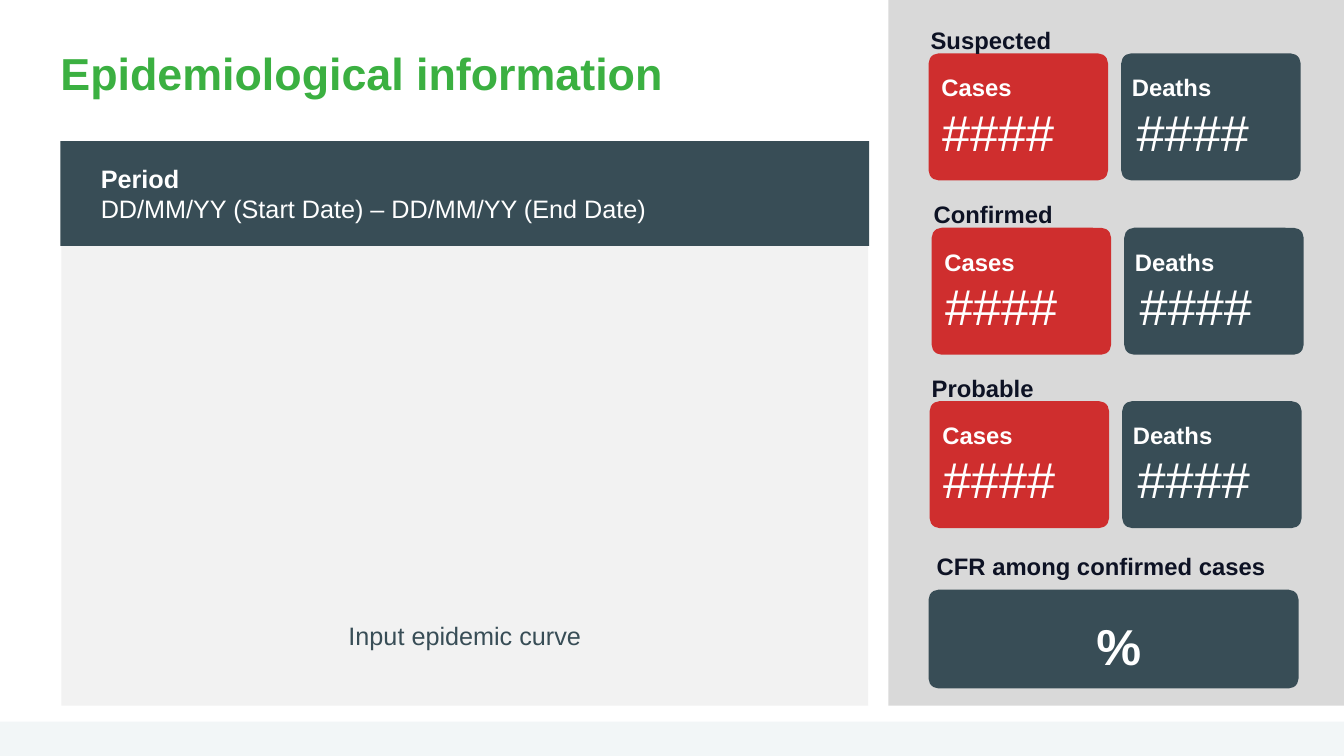
"""Build the epidemiological information slide."""
from pptx import Presentation
from pptx.dml.color import RGBColor
from pptx.enum.shapes import MSO_SHAPE
from pptx.enum.text import MSO_ANCHOR, MSO_AUTO_SIZE, PP_ALIGN
from pptx.util import Inches, Pt

GREEN, RED, SLATE, NAVY, WHITE = "3BB041", "CF2E2E", "384D56", "0D1224", "FFFFFF"
INSETS = ("margin_left", "margin_top", "margin_right", "margin_bottom")

presentation = Presentation()
presentation.slide_width = Inches(13.33)
presentation.slide_height = Inches(7.5)
slide = presentation.slides.add_slide(presentation.slide_layouts[5])


def add_panel(left, top, width, height, color, radius=0):
    """Add a filled panel, rounded when a radius in inches is given."""
    kind = MSO_SHAPE.ROUNDED_RECTANGLE if radius else MSO_SHAPE.RECTANGLE
    shape = slide.shapes.add_shape(
        kind, Inches(left), Inches(top), Inches(width), Inches(height))
    if radius:
        shape.adjustments[0] = radius / min(width, height)
    shape.shadow.inherit = False
    shape.fill.solid()
    shape.fill.fore_color.rgb = RGBColor.from_string(color)
    shape.line.fill.background()
    return shape


def write_lines(shape, lines, size, color, insets, frame_format, paragraph_format):
    """Write (text, bold) lines into a shape."""
    frame = shape.text_frame
    frame_values = dict(zip(INSETS, map(Inches, insets))) | frame_format
    for name, value in frame_values.items():
        setattr(frame, name, value)
    frame.text = "\n".join(text for text, bold in lines)
    for paragraph, (text, bold) in zip(frame.paragraphs, lines):
        for name, value in paragraph_format.items():
            setattr(paragraph, name, value)
        font_format = {"name": "Arial", "size": Pt(size), "bold": bold}
        for name, value in font_format.items():
            setattr(paragraph.font, name, value)
        paragraph.font.color.rgb = RGBColor.from_string(color)


title = slide.shapes.title
title_box = {"left": 0.6, "top": 0.4, "width": 6.22, "height": 1.19}
for name, value in title_box.items():
    setattr(title, name, Inches(value))
write_lines(title, [("Epidemiological information", True)], 32, GREEN, (0, 0, 0, 0),
            {"vertical_anchor": MSO_ANCHOR.TOP, "word_wrap": True},
            {"alignment": PP_ALIGN.LEFT, "line_spacing": 1.1})

add_panel(0, 7.16, 13.33, 0.34, "F2F6F7")
add_panel(8.81, 0, 4.52, 7, "D9D9D9")

curve_area = add_panel(0.61, 1.4, 8, 5.6, "F2F2F2")
write_lines(curve_area, [("Input epidemic curve", False)], 18, SLATE,
            (0.05, 0.05, 0.05, 0.55), {"vertical_anchor": MSO_ANCHOR.BOTTOM},
            {"alignment": PP_ALIGN.CENTER})

period_banner = add_panel(0.6, 1.4, 8.02, 1.04, SLATE)
period_lines = [("Period", True), ("DD/MM/YY (Start Date) – DD/MM/YY (End Date)", False)]
write_lines(period_banner, period_lines, 18, WHITE, (0.4, 0.05, 0.05, 0.05),
            {"vertical_anchor": MSO_ANCHOR.MIDDLE}, {"alignment": PP_ALIGN.LEFT})

HEADING = (0.41, 17, NAVY, True, PP_ALIGN.LEFT)
CARD_LABEL = (0.41, 17, WHITE, True, PP_ALIGN.CENTER)
CARD_NUMBER = (0.78, 36, WHITE, False, PP_ALIGN.CENTER)
RATE = (0.78, 36, WHITE, True, PP_ALIGN.CENTER)

CARD_RADIUS = 0.1
cards = [("Cases", 0, RED, 0.07, 0.81, 0.08), ("Deaths", 1.91, SLATE, 0.05, 0.9, 0.1)]
groups = [("Suspected", 9.21, 0.53, 1.31), ("Confirmed", 9.24, 2.26, 1.29),
          ("Probable", 9.22, 3.98, 1.12)]

labels = []
for heading, group_left, top, heading_width in groups:
    labels.append((heading, group_left - 0.03, top - 0.38, heading_width, HEADING))
    for label, offset, color, label_inset, label_width, number_inset in cards:
        left = group_left + offset
        add_panel(left, top, 1.78, 1.26, color, CARD_RADIUS)
        labels.append((label, left + label_inset, top + 0.09, label_width, CARD_LABEL))
        labels.append(("####", left + number_inset, top + 0.3, 1.22, CARD_NUMBER))

add_panel(9.21, 5.85, 3.67, 0.98, SLATE, CARD_RADIUS)
labels.append(("CFR among confirmed cases", 9.24, 5.37, 3.39, HEADING))
labels.append(("%", 10.82, 5.93, 0.55, RATE))

for text, left, top, width, (height, size, color, bold, alignment) in labels:
    box = slide.shapes.add_textbox(
        Inches(left), Inches(top), Inches(width), Inches(height))
    write_lines(box, [(text, bold)], size, color, (0.05, 0.05, 0.05, 0.05),
                {"word_wrap": False, "auto_size": MSO_AUTO_SIZE.SHAPE_TO_FIT_TEXT},
                {"alignment": alignment, "line_spacing": 1.2})

presentation.save("out.pptx")
